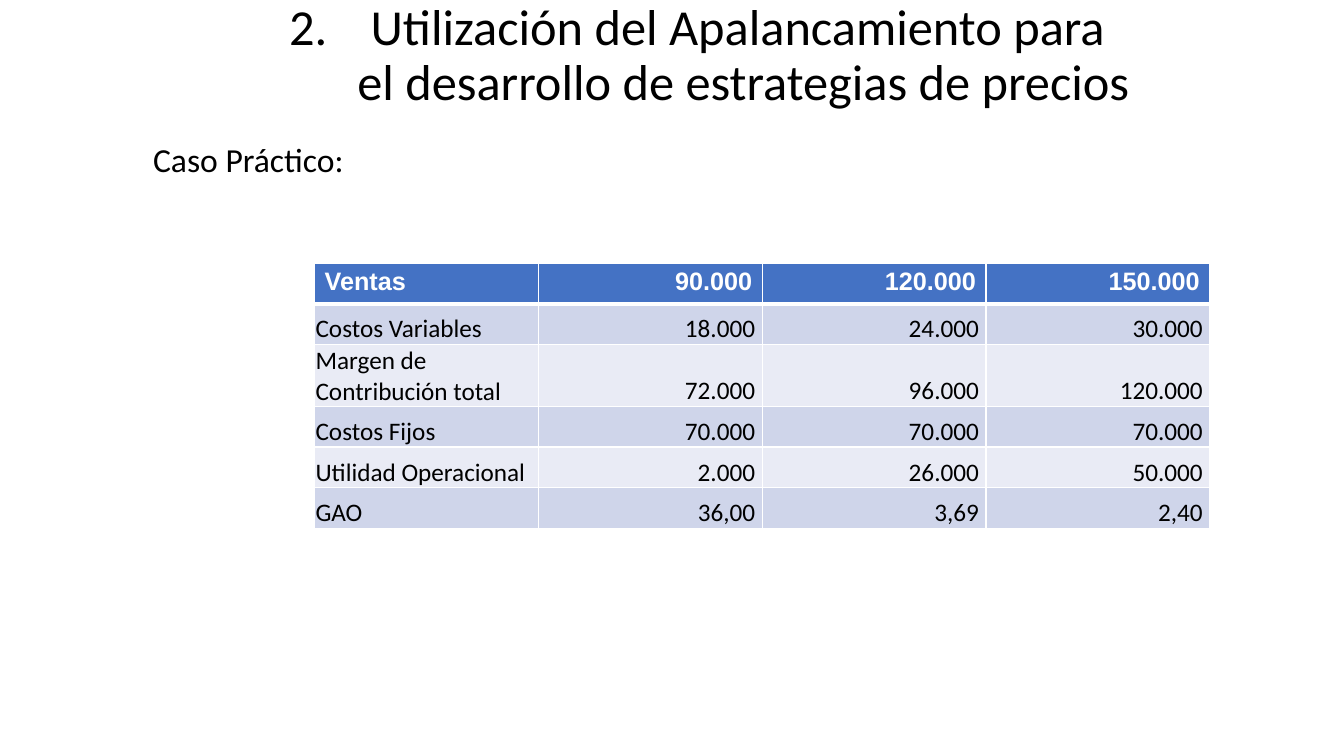
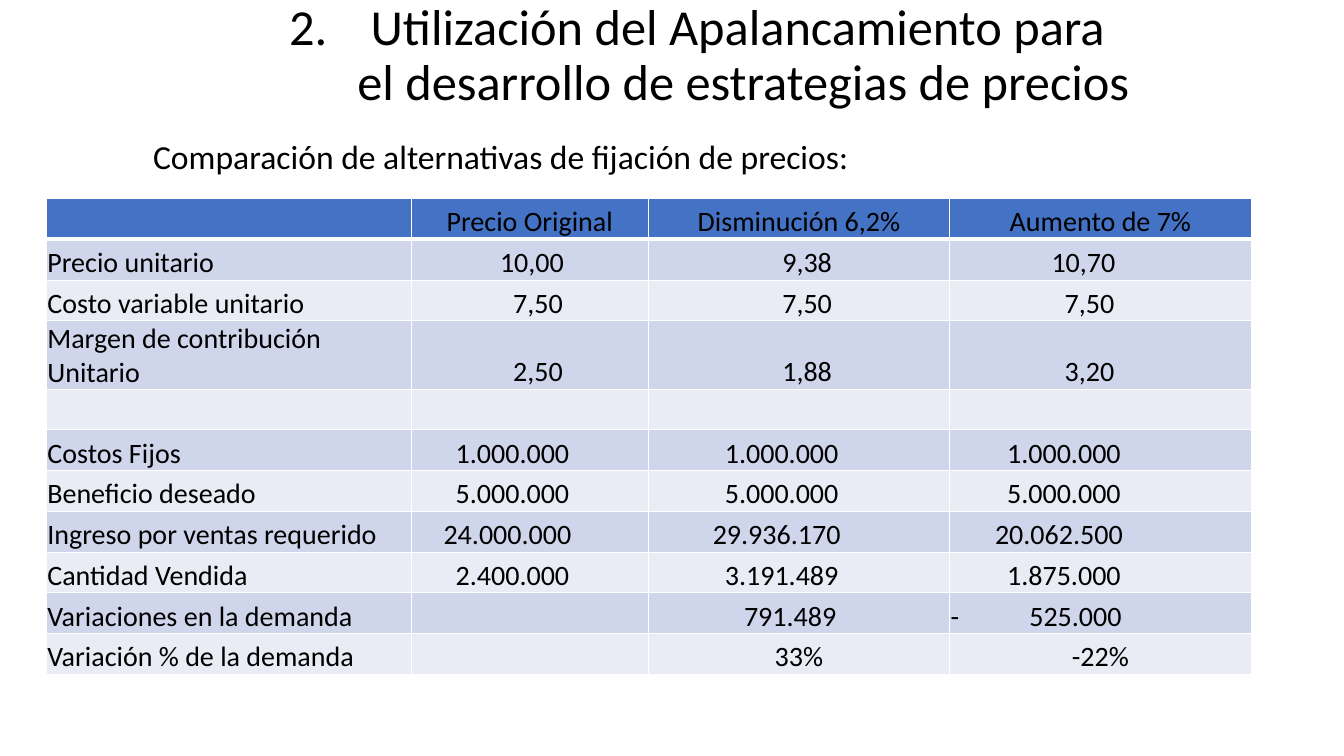
from dataclasses import dataclass

from lxml.etree import SubElement
from pptx import Presentation
from pptx.dml.color import RGBColor
from pptx.enum.text import MSO_ANCHOR as Anchor, PP_ALIGN as Align
from pptx.oxml.ns import qn
from pptx.util import Inches, Pt

BLACK, WHITE = "000000", "FFFFFF"
HEADER, BANDS = "4472C4", ("CFD5EA", "E9EBF5")
TITLE = "Utilización del Apalancamiento para \vel desarrollo de estrategias de precios"

# Left offset of each number column, and the shift back by number of characters
COLUMN_START = (0, 1.0, 1.32, 1.13)
LENGTH_SHIFT = {4: 0, 5: 0.13, 7: 0.38, 9: 0.57, 10: 0.69}
SIGN_TAB = 0.78


@dataclass
class CellStyle:
    size: int
    font: str = "Calibri"
    color: str = BLACK
    bold: bool = False
    align: Align = Align.LEFT
    anchor: Anchor = Anchor.BOTTOM
    left: float = 0.01
    right: float = 0.01
    top: float = 0.01
    bottom: float = 0.0


@dataclass
class TableSpec:
    left: float
    top: float
    height: float
    widths: tuple
    rows: list


def rgb(color: str) -> RGBColor:
    return RGBColor.from_string(color)


def set_all(target, formats: dict) -> None:
    for name, value in formats.items():
        setattr(target, name, value)


def add_run(p, text: str, size: int, font: str = "Calibri",
            color: str = BLACK, bold: bool = False) -> None:
    p.add_run().text = text
    for r in p.runs:
        set_all(r.font, {"size": Pt(size), "name": font, "bold": bold})
        r.font.color.rgb = rgb(color)


def add_text(s, box: tuple, anchor: Anchor):
    tf = s.shapes.add_textbox(*map(Inches, box)).text_frame
    set_all(tf, {"word_wrap": True, "vertical_anchor": anchor})
    p = tf.paragraphs[0]
    p.line_spacing = 0.9
    return p


def add_title(s) -> None:
    p = add_text(s, (0.79, 0, 12.36, 1.13), Anchor.MIDDLE)
    p.alignment = Align.CENTER
    pPr = p._p.get_or_add_pPr()
    pPr.set("marL", str(Inches(0.81)))
    pPr.set("indent", str(Inches(-0.81)))
    SubElement(pPr, qn("a:buFont"), typeface="+mj-lt")
    SubElement(pPr, qn("a:buAutoNum"), type="arabicPeriod", startAt="2")
    first, second = TITLE.split("\v")
    add_run(p, first, 36)
    p.add_line_break()
    add_run(p, second, 36)


def add_subtitle(s, text: str, top: float) -> None:
    p = add_text(s, (1.42, top, 11, 0.5), Anchor.TOP)
    add_run(p, text, 24)


def set_borders(cell, row: int) -> None:
    tcPr = cell._tc.get_or_add_tcPr()
    thick = {0: "a:lnB", 1: "a:lnT"}.get(row)
    for i, tag in enumerate(("a:lnL", "a:lnR", "a:lnT", "a:lnB")):
        ln = SubElement(tcPr, qn(tag), w=str(Pt(3 if tag == thick else 1)))
        fill = SubElement(ln, qn("a:solidFill"))
        SubElement(fill, qn("a:srgbClr"), val=WHITE)
        tcPr.remove(ln)
        tcPr.insert(i, ln)


def fill_cell(cell, text: str, style: CellStyle) -> None:
    set_all(cell, {
        "vertical_anchor": style.anchor,
        "margin_left": Inches(style.left), "margin_right": Inches(style.right),
        "margin_top": Inches(style.top), "margin_bottom": Inches(style.bottom),
    })
    if not text:
        return
    p = cell.text_frame.paragraphs[0]
    p.alignment = style.align
    if "\t" in text:
        tabs = SubElement(p._p.get_or_add_pPr(), qn("a:tabLst"))
        SubElement(tabs, qn("a:tab"), pos=str(Inches(SIGN_TAB)), algn="l")
    add_run(p, text, style.size, style.font, style.color, style.bold)


def add_table(s, spec: TableSpec, style_of) -> None:
    shape = s.shapes.add_table(
        len(spec.rows), len(spec.widths), Inches(spec.left), Inches(spec.top),
        Inches(sum(spec.widths)), Inches(spec.height))
    table = shape.table
    for column, width in zip(table.columns, spec.widths):
        column.width = Inches(width)
    for i, row in enumerate(spec.rows):
        for j, text in enumerate(row):
            cell = table.cell(i, j)
            cell.fill.solid()
            cell.fill.fore_color.rgb = rgb(BANDS[(i - 1) % 2] if i else HEADER)
            set_borders(cell, i)
            fill_cell(cell, text, style_of(i, j, text))


def case_style(i: int, j: int, text: str) -> CellStyle:
    align = Align.RIGHT if j else Align.LEFT
    if i == 0:
        return CellStyle(18, "Arial", WHITE, True, align, Anchor.TOP,
                         0.1, 0.1, 0.05, 0.05)
    return CellStyle(18, align=align, right=0.07 if j else 0.01)


def comparison_style(i: int, j: int, text: str) -> CellStyle:
    if j and (i == 0 or text.endswith("%")):
        return CellStyle(20, align=Align.CENTER)
    if j and text and "\t" not in text:
        return CellStyle(20, left=0.01 + COLUMN_START[j] - LENGTH_SHIFT[len(text)])
    return CellStyle(20)


CASE = TableSpec(3.12, 2.61, 2.43, (2.22,) * 4, [
    ("Ventas", "90.000", "120.000", "150.000"),
    ("Costos Variables", "18.000", "24.000", "30.000"),
    ("Margen de Contribución total", "72.000", "96.000", "120.000"),
    ("Costos Fijos", "70.000", "70.000", "70.000"),
    ("Utilidad Operacional", "2.000", "26.000", "50.000"),
    ("GAO", "36,00", "3,69", "2,40"),
])

COMPARISON = TableSpec(0.46, 1.97, 4.45, (3.62, 2.35, 2.99, 2.99), [
    ("", "Precio Original", "Disminución 6,2%", "Aumento de 7%"),
    ("Precio unitario", "10,00", "9,38", "10,70"),
    ("Costo variable unitario", "7,50", "7,50", "7,50"),
    ("Margen de contribución Unitario", "2,50", "1,88", "3,20"),
    ("", "", "", ""),
    ("Costos Fijos", "1.000.000", "1.000.000", "1.000.000"),
    ("Beneficio deseado", "5.000.000", "5.000.000", "5.000.000"),
    ("Ingreso por ventas requerido", "24.000.000", "29.936.170", "20.062.500"),
    ("Cantidad Vendida", "2.400.000", "3.191.489", "1.875.000"),
    ("Variaciones en la demanda", "", "791.489", "-\t525.000"),
    ("Variación % de la demanda", "", "33%", "-22%"),
])

SLIDES = [
    ("Caso Práctico:", 1.37, CASE, case_style),
    ("Comparación de alternativas de fijación de precios:", 1.34,
     COMPARISON, comparison_style),
]


def main() -> None:
    prs = Presentation()
    prs.slide_width, prs.slide_height = Inches(13.33), Inches(7.5)
    for subtitle, top, spec, style_of in SLIDES:
        s = prs.slides.add_slide(prs.slide_layouts[6])
        add_title(s)
        add_subtitle(s, subtitle, top)
        add_table(s, spec, style_of)
    prs.save("out.pptx")


if __name__ == "__main__":
    main()
